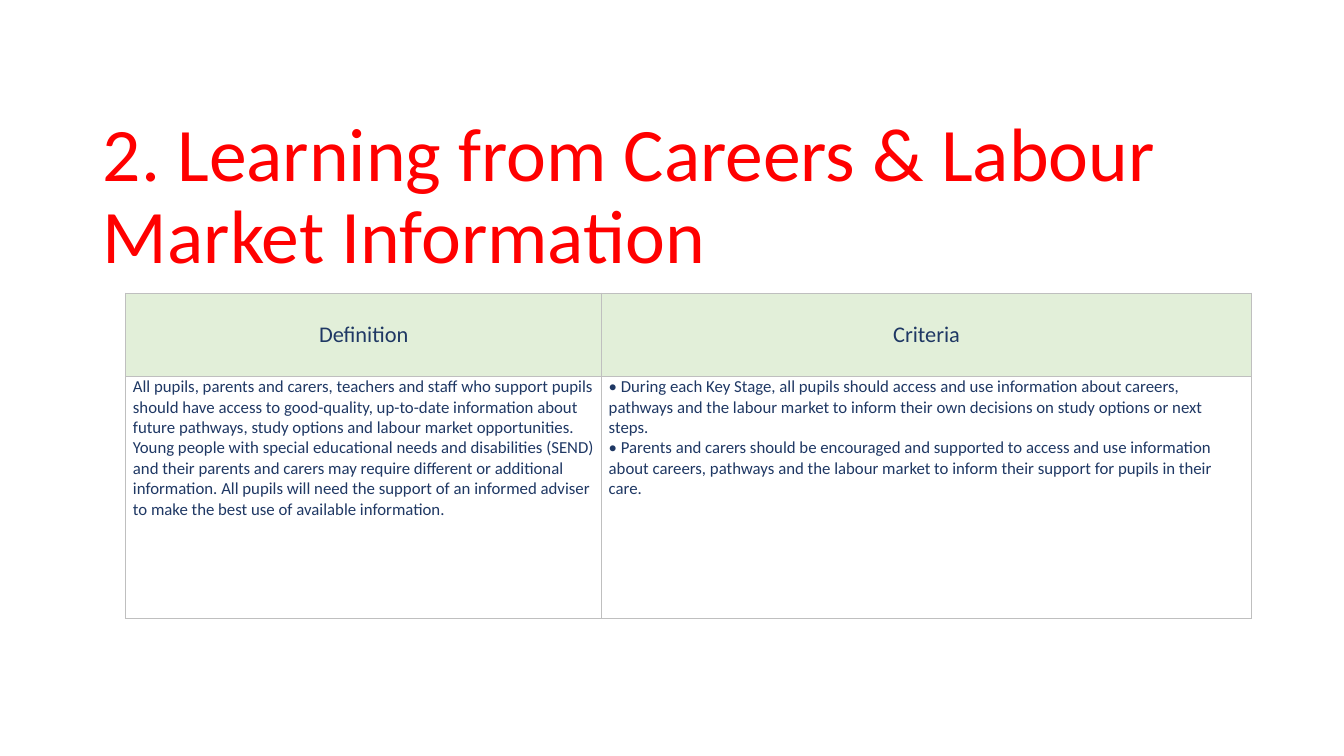
"""Build the slide on learning from careers and labour market information."""
from lxml import etree
from pptx import Presentation
from pptx import util as u
from pptx.dml.color import RGBColor
from pptx.enum import text
from pptx.oxml import ns

COLOURS = {"title": "FF0000", "text": "1F3864", "header": "E2EFD9", "border": "BFBFBF"}

TITLE = "2. Learning from Careers & Labour Market Information"
HEADERS = ["Definition", "Criteria"]
DEFINITION = (
    "All pupils, parents and carers, teachers and staff who support pupils should have access "
    "to good-quality, up-to-date information about future pathways, study options and labour "
    "market opportunities. Young people with special educational needs and disabilities (SEND) "
    "and their parents and carers may require different or additional information. All pupils "
    "will need the support of an informed adviser to make the best use of available information."
)
CRITERIA = [
    "• During each Key Stage, all pupils should access and use information about careers, "
    "pathways and the labour market to inform their own decisions on study options or next steps.",
    "• Parents and carers should be encouraged and supported to access and use information about "
    "careers, pathways and the labour market to inform their support for pupils in their care.",
]


class SlideBuilder:
    """Hold the style and the current slide, and add each kind of element."""

    font_name = "Calibri"
    title_size, header_size, body_size = 54, 16, 12

    def __init__(self, presentation):
        self.slide = presentation.slides.add_slide(presentation.slide_layouts[5])

    def format_paragraph(self, paragraph, size, colour, alignment):
        paragraph.alignment = alignment
        for run in paragraph.runs:
            run.font.name = self.font_name
            run.font.size = u.Pt(size)
            run.font.bold = False
            run.font.color.rgb = RGBColor.from_string(COLOURS[colour])

    def add_title(self, wording, left, top, width, height):
        title = self.slide.shapes.title
        title.left, title.top = u.Cm(left), u.Cm(top)
        title.width, title.height = u.Cm(width), u.Cm(height)
        frame = title.text_frame
        frame.text = wording
        frame.word_wrap = True
        frame.auto_size = text.MSO_AUTO_SIZE.NONE
        frame.vertical_anchor = text.MSO_ANCHOR.BOTTOM
        paragraph = frame.paragraphs[0]
        paragraph.line_spacing = 0.9
        self.format_paragraph(paragraph, self.title_size, "title", text.PP_ALIGN.LEFT)

    def add_borders(self, cell):
        properties = cell._tc.get_or_add_tcPr()
        for side in ("lnL", "lnR", "lnT", "lnB"):
            line = etree.SubElement(properties, ns.qn(f"a:{side}"), w=str(u.Pt(1)))
            fill = etree.SubElement(line, ns.qn("a:solidFill"))
            etree.SubElement(fill, ns.qn("a:srgbClr"), val=COLOURS["border"])

    def fill_cell(self, cell, wording, is_header):
        cell.margin_left = cell.margin_right = u.Cm(0.18)
        cell.margin_top = cell.margin_bottom = 0
        self.add_borders(cell)
        if is_header:
            cell.fill.solid()
            cell.fill.fore_color.rgb = RGBColor.from_string(COLOURS["header"])
            cell.vertical_anchor = text.MSO_ANCHOR.MIDDLE
            size, alignment = self.header_size, text.PP_ALIGN.CENTER
        else:
            cell.fill.background()
            cell.vertical_anchor = text.MSO_ANCHOR.TOP
            size, alignment = self.body_size, text.PP_ALIGN.LEFT
        cell.text_frame.text = wording
        for paragraph in cell.text_frame.paragraphs:
            self.format_paragraph(paragraph, size, "text", alignment)

    def add_table(self, rows, left, top, widths, heights):
        table = self.slide.shapes.add_table(
            len(heights), len(widths), u.Cm(left), u.Cm(top),
            u.Cm(sum(widths)), u.Cm(sum(heights)),
        ).table
        table.first_row = table.horz_banding = False
        for column, width in zip(table.columns, widths):
            column.width = u.Cm(width)
        for row_index, (row, height) in enumerate(zip(table.rows, heights)):
            row.height = u.Cm(height)
            for cell, wording in zip(row.cells, rows[row_index]):
                self.fill_cell(cell, wording, row_index == 0)


def main():
    presentation = Presentation()
    presentation.slide_width, presentation.slide_height = u.Cm(33.87), u.Cm(19.05)
    builder = SlideBuilder(presentation)
    builder.add_title(TITLE, 2.34, 3.12, 29.21, 4.06)
    builder.add_table(
        [HEADERS, [DEFINITION, "\n".join(CRITERIA)]],
        3.17, 7.39, widths=[11.99, 16.38], heights=[2.1, 6.1],
    )
    presentation.save("out.pptx")


if __name__ == "__main__":
    main()
